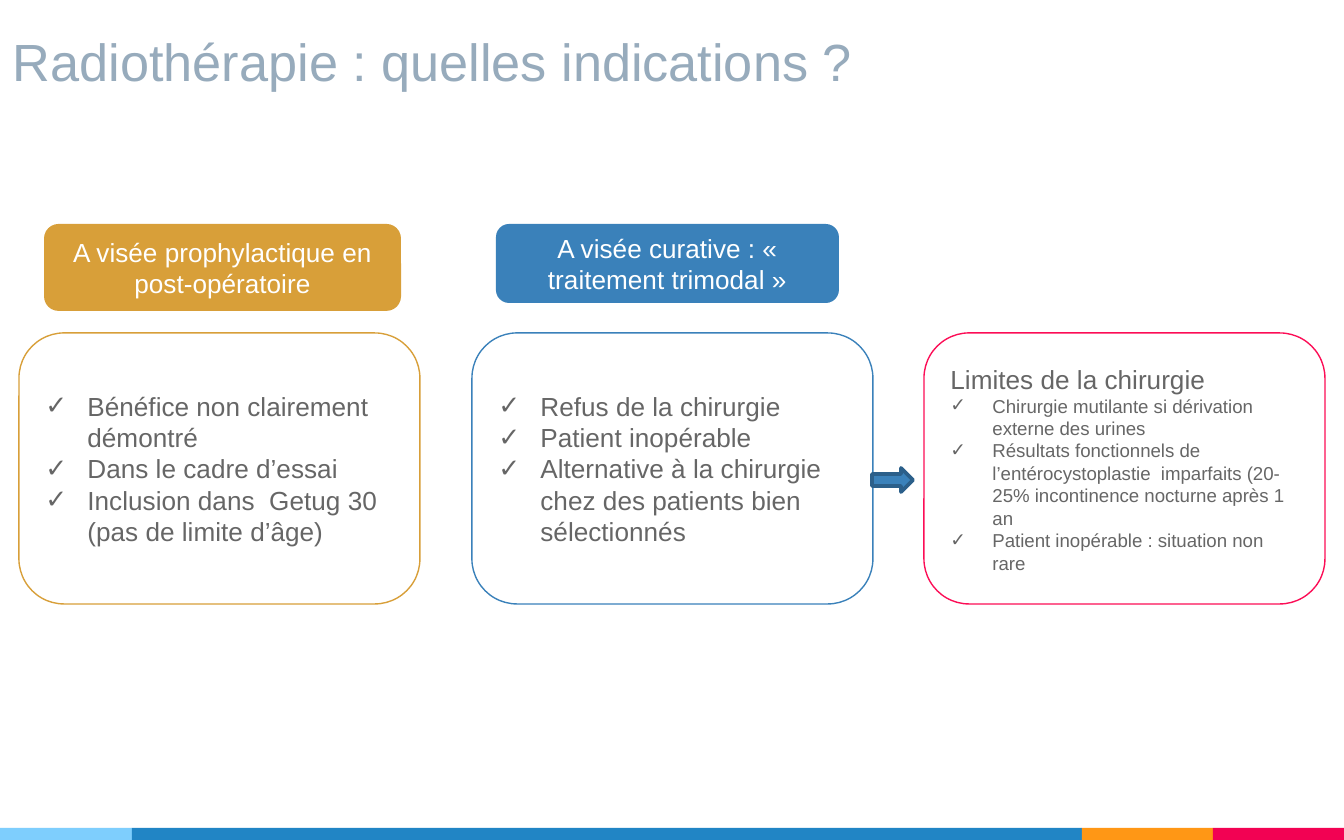
from pptx import Presentation
from pptx.dml.color import RGBColor
from pptx.enum.shapes import MSO_SHAPE as Shape
from pptx.enum.text import MSO_ANCHOR as Anchor, PP_ALIGN as Align
from pptx.oxml.ns import qn
from pptx.util import Emu, Pt
from lxml.etree import SubElement

EMU_PER_PX = 914400 / 134.4
FONT = "Arial"
GOLD, BLUE, PINK = "D89F39", "3A81BA", "FC0D56"
GREY, WHITE = "666666", "FFFFFF"

CARD_TOP, CARD_WIDTH, CARD_HEIGHT = 333, 401, 271
BULLET_INDENT = 42


def px(value):
    return Emu(round(value * EMU_PER_PX))


def color(hex_string):
    return RGBColor.from_string(hex_string)


def add_box(slide, kind, box, fill=None, line=None, line_width=0.75):
    shape = slide.shapes.add_shape(kind, *map(px, box))
    shape.shadow.inherit = False
    if fill:
        shape.fill.solid()
        shape.fill.fore_color.rgb = color(fill)
    else:
        shape.fill.background()
    if line:
        shape.line.color.rgb = color(line)
        shape.line.width = Pt(line_width)
    else:
        shape.line.fill.background()
    return shape


def add_run(paragraph, text, size, hex_string):
    run = paragraph.add_run()
    run.text = text
    run.font.name = FONT
    run.font.size = Pt(size)
    run.font.color.rgb = color(hex_string)


def set_check_bullet(paragraph):
    properties = paragraph._p.get_or_add_pPr()
    properties.set("marL", str(px(BULLET_INDENT)))
    properties.set("indent", str(-px(BULLET_INDENT)))
    SubElement(properties, qn("a:buFont"), typeface=FONT)
    SubElement(properties, qn("a:buChar"), char="✓")


def add_title(slide, text):
    frame = slide.shapes.add_textbox(px(0), px(-1), px(950), px(106)).text_frame
    frame.word_wrap = True
    frame.vertical_anchor = Anchor.BOTTOM
    frame.margin_left = frame.margin_right = px(13)
    frame.margin_top = frame.margin_bottom = px(13)
    add_run(frame.paragraphs[0], text, 28, "97ABBC")


def add_heading(slide, box, fill, text):
    frame = add_box(slide, Shape.ROUNDED_RECTANGLE, box, fill).text_frame
    frame.word_wrap = True
    frame.vertical_anchor = Anchor.MIDDLE
    frame.paragraphs[0].alignment = Align.CENTER
    add_run(frame.paragraphs[0], text, 14, WHITE)


def add_card(slide, left, line, items, size=14, heading=None):
    box = (left, CARD_TOP, CARD_WIDTH, CARD_HEIGHT)
    frame = add_box(slide, Shape.ROUNDED_RECTANGLE, box, line=line).text_frame
    frame.word_wrap = True
    frame.vertical_anchor = Anchor.MIDDLE
    paragraph = frame.paragraphs[0]
    paragraph.alignment = Align.LEFT
    if heading:
        add_run(paragraph, heading, 14, GREY)
    for index, item in enumerate(items):
        if heading or index:
            paragraph = frame.add_paragraph()
            paragraph.alignment = Align.LEFT
        set_check_bullet(paragraph)
        add_run(paragraph, item, size, GREY)


def add_footer(slide):
    left = 0
    for width, fill in ((132, "7ECEFD"), (950, "2185C5"),
                        (131, "FF9715"), (131, "F20253")):
        add_box(slide, Shape.RECTANGLE, (left, 828, width, 12), fill)
        left += width


def main():
    presentation = Presentation()
    presentation.slide_width, presentation.slide_height = px(1344), px(840)
    slide = presentation.slides.add_slide(presentation.slide_layouts[6])

    # Footer band and title
    add_footer(slide)
    add_title(slide, "Radiothérapie : quelles indications ?")

    # Column headings
    add_heading(slide, (496, 224, 343, 79), BLUE,
                "A visée curative : « traitement trimodal »")
    add_heading(slide, (44, 224, 357, 87), GOLD,
                "A visée prophylactique en post-opératoire")

    # Cards
    add_card(slide, 19, GOLD, [
        "Bénéfice non clairement démontré",
        "Dans le cadre d’essai",
        "Inclusion dans  Getug 30 (pas de limite d’âge)",
    ])
    add_card(slide, 472, BLUE, [
        "Refus de la chirurgie",
        "Patient inopérable",
        "Alternative à la chirurgie chez des patients bien sélectionnés",
    ])
    add_card(slide, 924, PINK, [
        "Chirurgie mutilante si dérivation externe des urines",
        "Résultats fonctionnels de l’entérocystoplastie  imparfaits "
        "(20-25% incontinence nocturne après 1 an",
        "Patient inopérable : situation non rare",
    ], size=10, heading="Limites de la chirurgie")

    # Arrow from the curative card to the limits of surgery
    add_box(slide, Shape.RIGHT_ARROW, (872, 468, 41, 24), BLUE, "2B5F8A", 2)

    presentation.save("out.pptx")


if __name__ == "__main__":
    main()
